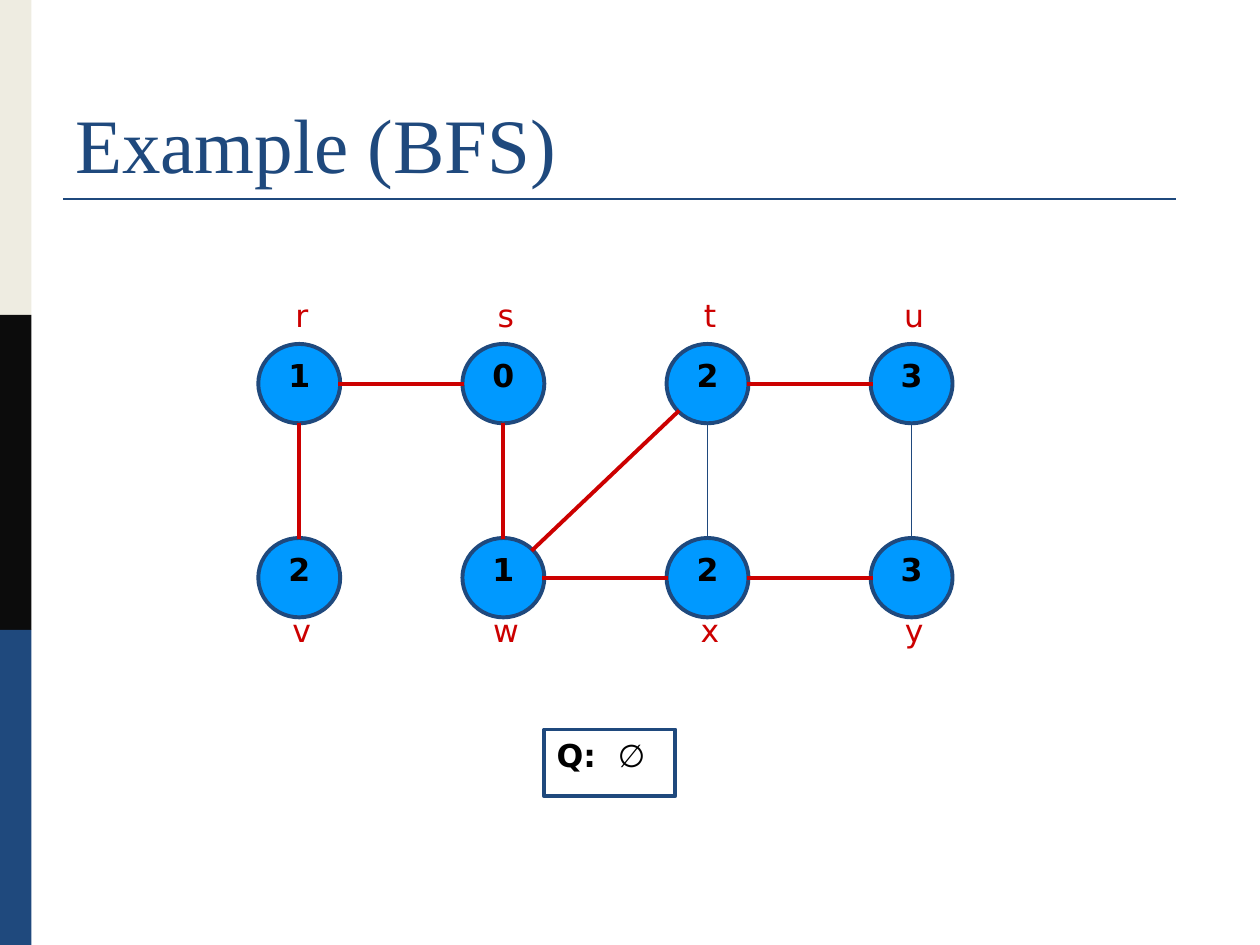
import math
import pptx
import pptx.util
import pptx.dml.color
import pptx.enum.shapes
import pptx.enum.text
import pptx.oxml.ns
import lxml.etree

SHAPE = pptx.enum.shapes.MSO_SHAPE
ALIGN = pptx.enum.text.PP_ALIGN
ANCHOR = pptx.enum.text.MSO_ANCHOR
IN = pptx.util.Inches
NAVY, RED, BLUE, BLACK = "1F497D", "CC0000", "0099FF", "000000"
NODE_W, NODE_H = 0.65, 0.63
NODES = [[("r", "1"), ("s", "0"), ("t", "2"), ("u", "3")],
         [("v", "2"), ("w", "1"), ("x", "2"), ("y", "3")]]
EDGES = [("rs", RED, 2.25), ("wx", RED, 2.25), ("xy", RED, 2.25),
         ("tu", RED, 2.25), ("rv", RED, 2.25), ("sw", RED, 2.25),
         ("tx", NAVY, 0.75), ("uy", NAVY, 1), ("wt", RED, 2.25)]


def color(value):
    return pptx.dml.color.RGBColor.from_string(value)


def add_shape(s, kind, x, y, w, h, fill=None, line=None):
    sp = s.shapes.add_shape(kind, IN(x), IN(y), IN(w), IN(h))
    sp.shadow.inherit = False
    if fill:
        sp.fill.solid()
        sp.fill.fore_color.rgb = color(fill)
    else:
        sp.fill.background()
    if line:
        sp.line.color.rgb = color(line)
        sp.line.width = pptx.util.Pt(2.25)
    else:
        sp.line.fill.background()
    return sp


def add_line(s, x1, y1, x2, y2, line, width):
    c = s.shapes.add_connector(pptx.enum.shapes.MSO_CONNECTOR.STRAIGHT,
                               IN(x1), IN(y1), IN(x2), IN(y2))
    c.line.color.rgb = color(line)
    c.line.width = pptx.util.Pt(width)
    lxml.etree.SubElement(c._element.spPr, pptx.oxml.ns.qn("a:effectLst"))


def set_font(p, size, name, fill, bold=False):
    p.font.size = pptx.util.Pt(size)
    p.font.name = name
    p.font.color.rgb = color(fill)
    p.font.bold = bold


def add_text(s, text, x, y, w, h, fill, size=18, name="DejaVu Sans",
             bold=False, align=ALIGN.CENTER, anchor=ANCHOR.TOP):
    tf = s.shapes.add_textbox(IN(x), IN(y), IN(w), IN(h)).text_frame
    tf.word_wrap = True
    tf.vertical_anchor = anchor
    p = tf.paragraphs[0]
    p.text = text
    p.alignment = align
    set_font(p, size, name, fill, bold)


def side_bar(s, x, y, w, h):
    for i, fill in enumerate(("EEECE1", "0C0C0C", NAVY)):
        add_shape(s, SHAPE.RECTANGLE, x, y + i * h / 3, w, h / 3, fill)


def title(s, x, y, w, h):
    add_text(s, "Example (BFS)", x, y, w, h, NAVY, 44, "Times New Roman",
             align=ALIGN.LEFT, anchor=ANCHOR.BOTTOM)
    add_line(s, x, y + h + 0.03, x + w - 0.17, y + h + 0.03, NAVY, 1.5)


def graph(s, x, y, w, h):
    dx, dy = (w - NODE_W) / 3, h - NODE_H
    centers = {}
    for row, nodes in enumerate(NODES):
        for col, (label, value) in enumerate(nodes):
            left, top = x + col * dx, y + row * dy
            centers[label] = left + NODE_W / 2, top + NODE_H / 2
            add_shape(s, SHAPE.OVAL, left, top, NODE_W, NODE_H, BLUE, NAVY)
            add_text(s, value, left, top + 0.05, NODE_W, 0.5, BLACK, bold=True)
            label_top = top + (0.53 if row else -0.43)
            add_text(s, label, left + 0.02, label_top, NODE_W, 0.5, RED)
    for (a, b), line, width in EDGES:
        (x1, y1), (x2, y2) = centers[a], centers[b]
        trim = 0.31 / math.hypot(x2 - x1, y2 - y1)
        tx, ty = (x2 - x1) * trim, (y2 - y1) * trim
        add_line(s, x1 + tx, y1 + ty, x2 - tx, y2 - ty, line, width)


def queue(s, x, y, w, h):
    sp = add_shape(s, SHAPE.RECTANGLE, x, y, w, h, line=NAVY)
    tf = sp.text_frame
    tf.word_wrap = False
    tf.vertical_anchor = ANCHOR.TOP
    p = tf.paragraphs[0]
    p.alignment = ALIGN.LEFT
    set_font(p, 18, "DejaVu Sans", BLACK)
    for text, bold in (("Q:  ", True), ("∅", False)):
        r = p.add_run()
        r.text = text
        r.font.bold = bold


def main():
    prs = pptx.Presentation()
    prs.slide_width, prs.slide_height = IN(10), IN(7.5)
    s = prs.slides.add_slide(prs.slide_layouts[6])
    side_bar(s, 0, 0, 0.25, 7.5)
    title(s, 0.5, 0.3, 9, 1.25)
    graph(s, 2.05, 2.73, 5.51, 2.17)
    queue(s, 4.32, 5.79, 1.04, 0.53)
    prs.save("out.pptx")


if __name__ == "__main__":
    main()
